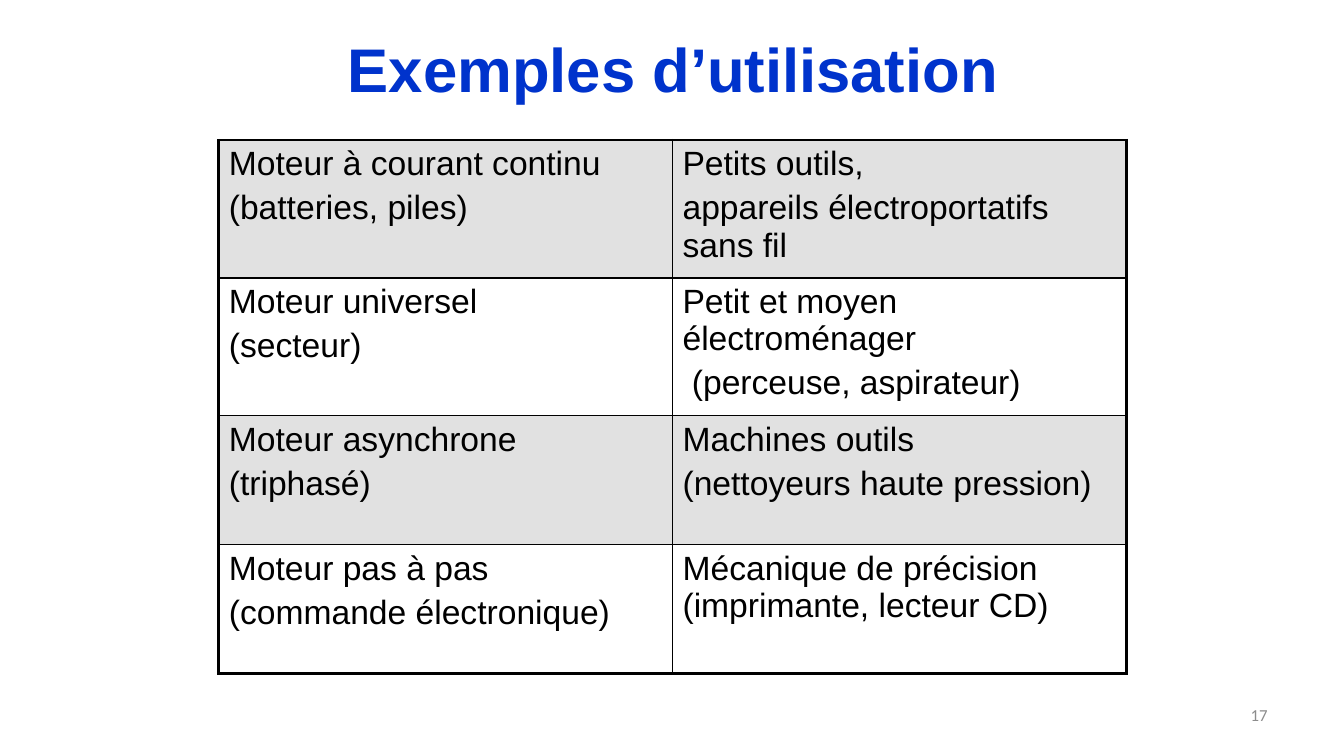
from dataclasses import dataclass

from lxml import etree
from pptx import Presentation
from pptx.dml.color import RGBColor
from pptx.enum.text import MSO_ANCHOR, PP_ALIGN
from pptx.oxml.ns import qn
from pptx.util import Inches, Pt

MIDDLE = MSO_ANCHOR.MIDDLE
CENTER, RIGHT = PP_ALIGN.CENTER, PP_ALIGN.RIGHT
TITLE_ONLY = 5


@dataclass(frozen=True)
class Theme:
    body_font: str = "Arial"
    number_font: str = "Calibri"
    title_color: str = "0033CC"
    text_color: str = "000000"
    number_color: str = "8C8C8C"
    band_color: str = "E1E1E1"
    title_size: float = 44
    body_size: float = 24
    number_size: float = 12
    paragraph_gap: float = 4.8
    outer_line: float = 2.25
    inner_line: float = 1


THEME = Theme()

MOTOR_USES = [
    (["Moteur à courant continu", "(batteries, piles)"],
     ["Petits outils,", "appareils électroportatifs sans fil"]),
    (["Moteur universel", "(secteur)"],
     ["Petit et moyen électroménager", " (perceuse, aspirateur)"]),
    (["Moteur asynchrone", "(triphasé)"],
     ["Machines outils", "(nettoyeurs haute pression)"]),
    (["Moteur pas à pas", "(commande électronique)"],
     ["Mécanique de précision (imprimante, lecteur CD)"]),
]


def set_font(para, name, size, color, bold=False):
    para.font.name = name
    para.font.size = Pt(size)
    para.font.bold = bold
    para.font.color.rgb = RGBColor.from_string(color)


def place(shape, box):
    shape.left, shape.top, shape.width, shape.height = map(Inches, box)


def add_title(page, box, text):
    title = page.shapes.title
    place(title, box)
    frame = title.text_frame
    frame.text = text
    frame.vertical_anchor = MIDDLE
    para = frame.paragraphs[0]
    para.alignment = CENTER
    set_font(para, THEME.body_font, THEME.title_size, THEME.title_color, bold=True)


def add_page_number(page, box, number):
    frame = page.shapes.add_textbox(*map(Inches, box)).text_frame
    frame.word_wrap = True
    frame.vertical_anchor = MIDDLE
    para = frame.paragraphs[0]
    para.text = str(number)
    para.alignment = RIGHT
    set_font(para, THEME.number_font, THEME.number_size, THEME.number_color)


def set_borders(cell, outer_sides):
    properties = cell._tc.get_or_add_tcPr()
    for side, is_outer in outer_sides.items():
        width = THEME.outer_line if is_outer else THEME.inner_line
        line = etree.SubElement(properties, qn(f"a:ln{side}"), w=str(Pt(width)))
        fill = etree.SubElement(line, qn("a:solidFill"))
        etree.SubElement(fill, qn("a:srgbClr"), val=THEME.text_color)


def fill_cell(cell, lines, banded):
    if banded:
        cell.fill.solid()
        cell.fill.fore_color.rgb = RGBColor.from_string(THEME.band_color)
    else:
        cell.fill.background()
    frame = cell.text_frame
    frame.text = "\n".join(lines)
    for index, para in enumerate(frame.paragraphs):
        para.space_before = Pt(THEME.paragraph_gap if index else 0)
        set_font(para, THEME.body_font, THEME.body_size, THEME.text_color)


def add_motor_table(page, box, rows):
    row_count, column_count = len(rows), len(rows[0])
    table = page.shapes.add_table(row_count, column_count, *map(Inches, box)).table
    table.first_row = False
    table.horz_banding = False
    for r, row in enumerate(rows):
        for c, lines in enumerate(row):
            cell = table.cell(r, c)
            set_borders(cell, {"L": c == 0, "R": c == column_count - 1,
                               "T": r == 0, "B": r == row_count - 1})
            fill_cell(cell, lines, banded=r % 2 == 0)


def main():
    deck = Presentation()
    deck.slide_width, deck.slide_height = Inches(13.33), Inches(7.5)
    page = deck.slides.add_slide(deck.slide_layouts[TITLE_ONLY])
    add_page_number(page, (9.56, 6.83, 3.11, 0.52), 17)
    add_title(page, (2.18, 0.05, 9, 1.25), "Exemples d’utilisation")
    add_motor_table(page, (2.17, 1.39, 9, 5.12), MOTOR_USES)
    deck.save("out.pptx")


if __name__ == "__main__":
    main()
